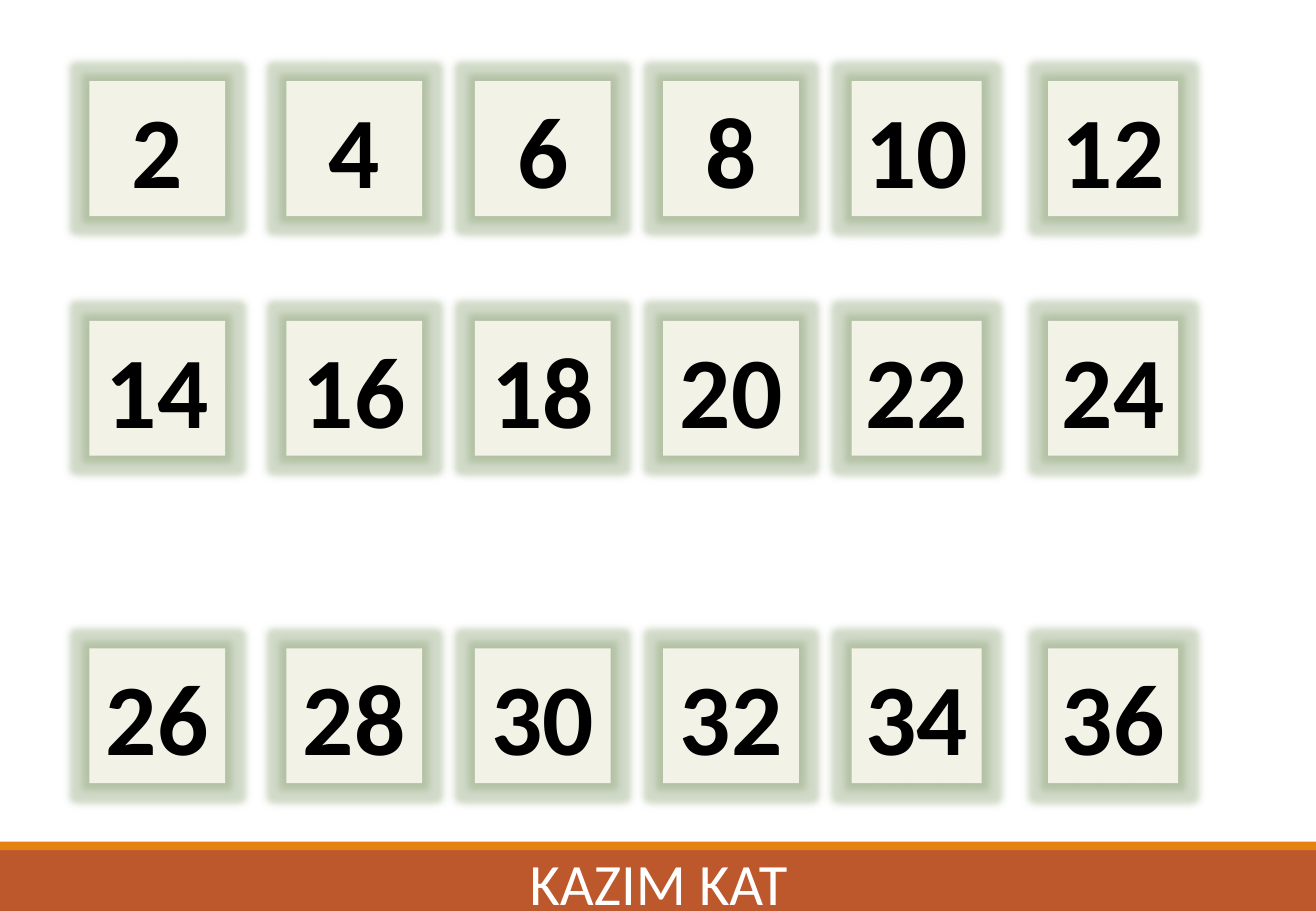
from lxml.etree import SubElement
from pptx import Presentation
from pptx.dml.color import RGBColor
from pptx.enum.shapes import MSO_SHAPE
from pptx.enum.text import MSO_ANCHOR, PP_ALIGN
from pptx.oxml.ns import qn
from pptx.util import Cm, Pt

COLORS = {
    "footer": "BD582C",
    "stripe": "E48312",
    "card": "F3F2E6",
    "glow": "94A97F",
    "number": "000000",
    "name": "FFFFFF",
}
SLIDE_WIDTH, SLIDE_HEIGHT = 27.52, 19.05
CARD_COLUMNS = [(1.87, 2.84), (5.99, 2.84), (9.93, 2.84), (13.87, 2.84), (17.81, 2.72), (21.92, 2.72)]
CARD_TOPS = [1.7, 6.71, 13.56]
CARD_HEIGHT = 2.82


def add_rectangle(slide, left, top, width, height, color):
    """Add a filled rectangle without outline or shadow."""
    shape = slide.shapes.add_shape(
        MSO_SHAPE.RECTANGLE, Cm(left), Cm(top), Cm(width), Cm(height))
    shape.shadow.inherit = False
    shape.fill.solid()
    shape.fill.fore_color.rgb = RGBColor.from_string(COLORS[color])
    shape.line.fill.background()
    return shape


def write_text(shape, text, size, color, anchor, bold=False):
    """Write one centred run into a shape."""
    frame = shape.text_frame
    frame.word_wrap = True
    frame.vertical_anchor = anchor
    paragraph = frame.paragraphs[0]
    paragraph.alignment = PP_ALIGN.CENTER
    run = paragraph.add_run()
    run.text = text
    run.font.name = "Calibri"
    run.font.size = Pt(size)
    run.font.bold = bold
    run.font.color.rgb = RGBColor.from_string(COLORS[color])


def add_glow(shape):
    """Surround a shape with a wide glow and a narrower soft halo."""
    effects = shape.element.spPr.find(qn("a:effectLst"))
    halo = {"blurRad": str(Pt(6)), "dist": "0", "algn": "ctr", "rotWithShape": "0"}
    for tag, attributes, alpha in (
        ("a:glow", {"rad": str(Pt(8))}, "40000"),
        ("a:outerShdw", halo, "30000"),
    ):
        effect = SubElement(effects, qn(tag), attributes)
        color = SubElement(effect, qn("a:srgbClr"), val=COLORS["glow"])
        SubElement(color, qn("a:alpha"), val=alpha)


def add_card(slide, left, top, width, number):
    """Add a glowing card that shows a number."""
    card = add_rectangle(slide, left, top, width, CARD_HEIGHT, "card")
    add_glow(card)
    write_text(card, str(number), 60, "number", MSO_ANCHOR.TOP, bold=True)


def add_footer(slide):
    """Add the footer band, its stripe and the name."""
    add_rectangle(slide, 0, 17.78, SLIDE_WIDTH, 1.27, "footer")
    add_rectangle(slide, 0, 17.6, SLIDE_WIDTH, 0.18, "stripe")
    name = slide.shapes.add_textbox(Cm(8.32), Cm(17.93), Cm(10.9), Cm(1.02))
    write_text(name, "KAZIM KAT", 34.7, "name", MSO_ANCHOR.MIDDLE)


def main():
    """Build the slide of even numbers."""
    presentation = Presentation()
    presentation.slide_width = Cm(SLIDE_WIDTH)
    presentation.slide_height = Cm(SLIDE_HEIGHT)
    slide = presentation.slides.add_slide(presentation.slide_layouts[6])
    add_footer(slide)
    for row, top in enumerate(CARD_TOPS):
        for column, (left, width) in enumerate(CARD_COLUMNS):
            number = 2 * (row * len(CARD_COLUMNS) + column + 1)
            add_card(slide, left, top, width, number)
    presentation.save("out.pptx")


if __name__ == "__main__":
    main()
